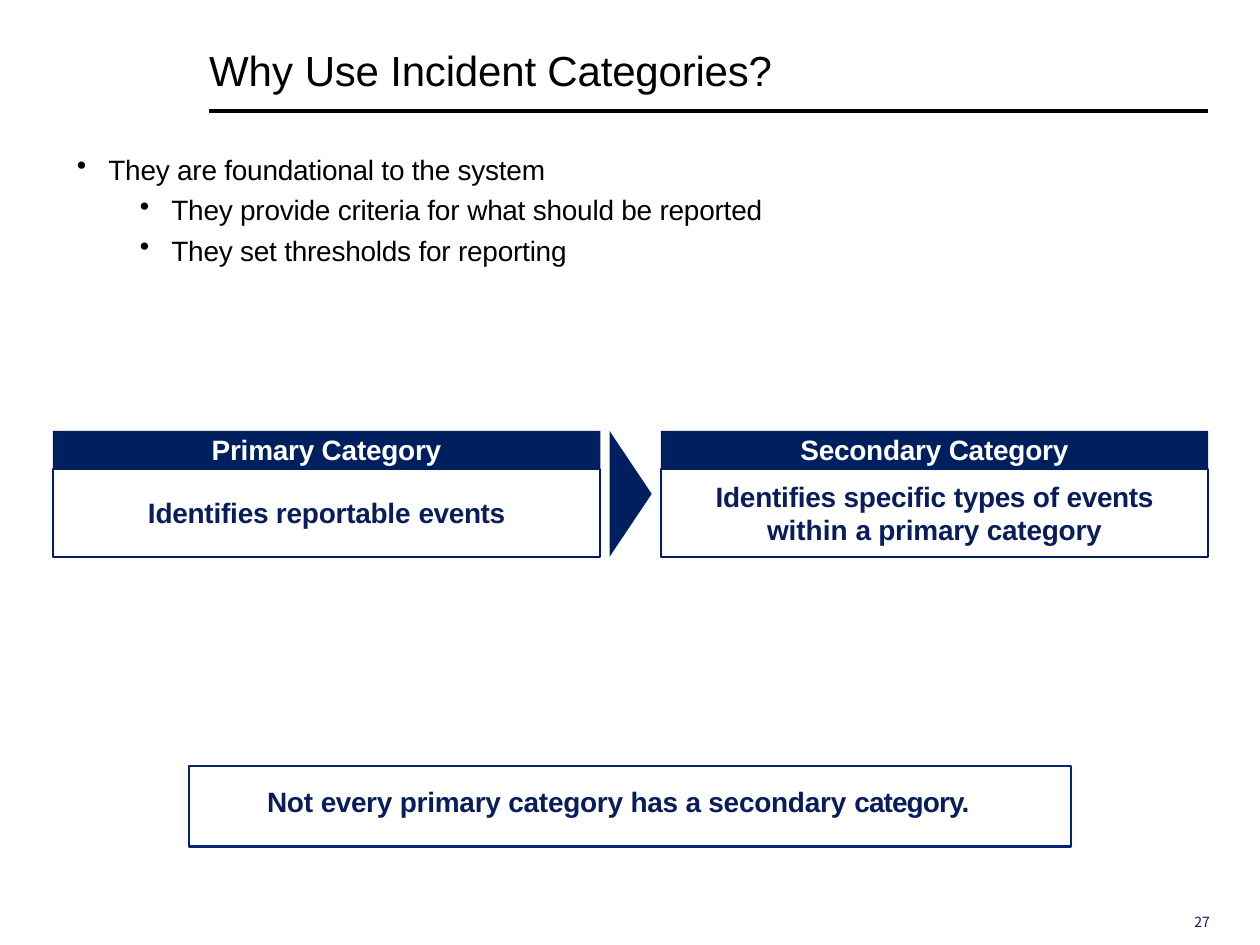
import lxml.etree
import pptx
import pptx.dml.color
import pptx.enum.shapes
import pptx.enum.text
import pptx.oxml.ns
import pptx.util

WIDTH = pptx.util.Inches(10)
HEIGHT = pptx.util.Inches(7.5)
COLUMN = WIDTH / 100
ROW = HEIGHT / 75
NAVY = "001F5F"
INK = "091D5D"
ALIGN = pptx.enum.text.PP_ALIGN
ANCHOR = pptx.enum.text.MSO_ANCHOR


def color(value):
    return pptx.dml.color.RGBColor.from_string(value)


def place(box):
    left, top, width, height = box
    return [round(length) for length in (left * COLUMN, top * ROW, width * COLUMN, height * ROW)]


def add_bullet(paragraph, level):
    properties = paragraph._p.get_or_add_pPr()
    properties.set("marL", str(pptx.util.Inches(0.27 + 0.5 * level)))
    properties.set("indent", str(pptx.util.Inches(-0.25)))
    bullet = lxml.etree.SubElement(properties, pptx.oxml.ns.qn("a:buChar"))
    bullet.set("char", "•")
    paragraph.level = level


def write(shape, paragraphs, size=16, font="Arial", ink="000000", bold=False, align=ALIGN.LEFT,
          anchor=ANCHOR.TOP, insets=(0, 0), levels=None, line_spacing=None):
    frame = shape.text_frame
    frame.word_wrap = True
    frame.vertical_anchor = anchor
    frame.margin_left, frame.margin_top = [pptx.util.Inches(inset) for inset in insets]
    frame.margin_right = frame.margin_bottom = 0
    for index, runs in enumerate(paragraphs):
        paragraph = frame.add_paragraph() if index else frame.paragraphs[0]
        if levels:
            add_bullet(paragraph, levels[index])
            if index:
                paragraph.space_before = pptx.util.Pt(4)
        paragraph.alignment = align
        if line_spacing:
            paragraph.line_spacing = pptx.util.Pt(line_spacing)
        for text, spacing in runs:
            run = paragraph.add_run()
            run.text = text
            run.font.name = font
            run.font.size = pptx.util.Pt(size)
            run.font.bold = bold
            run.font.color.rgb = color(ink)
            run._r.get_or_add_rPr().set("spc", str(round(spacing * 100)))


def add_text(slide, box, paragraphs, **text_format):
    shape = slide.shapes.add_textbox(*place(box))
    write(shape, paragraphs, **text_format)
    return shape


def paint(shape, fill=None, line=None, line_width=1):
    shape.shadow.inherit = False
    if fill:
        shape.fill.solid()
        shape.fill.fore_color.rgb = color(fill)
    else:
        shape.fill.background()
    if line:
        shape.line.color.rgb = color(line)
        shape.line.width = pptx.util.Pt(line_width)
    else:
        shape.line.fill.background()


def add_rectangle(slide, box, **style):
    shape = slide.shapes.add_shape(pptx.enum.shapes.MSO_SHAPE.RECTANGLE, *place(box))
    paint(shape, **style)
    return shape


def add_heading(slide, box):
    left, top, width, height = box
    x, y, length, drop = place(box)
    rule = slide.shapes.add_connector(
        pptx.enum.shapes.MSO_CONNECTOR.STRAIGHT, x, y + drop, x + length, y + drop)
    rule.line.color.rgb = color("000000")
    rule.line.width = pptx.util.Pt(2.04)
    lxml.etree.SubElement(rule._element.spPr, pptx.oxml.ns.qn("a:effectLst"))
    add_text(slide, (left, top, width, 4.2),
             [[("Why ", 0), ("Use Incident Categories?", -0.1)]], size=24)


def add_reasons(slide, box):
    reasons = [
        [("They are foundational to the system", -0.1)],
        [("They provide criteria for ", -0.1), ("what ", -0.2), ("should be reported", -0.1)],
        [("They set thresholds for reporting", -0.1)],
    ]
    add_text(slide, box, reasons, levels=[0, 1, 1])


def add_card(slide, box, heading, body):
    left, top, width, height = box
    head_height = height * 0.3
    centred = {"bold": True, "align": ALIGN.CENTER, "anchor": ANCHOR.MIDDLE}
    head = add_rectangle(slide, (left, top, width, head_height), fill=NAVY)
    write(head, [[(heading, -0.1)]], ink="FFFFFF", **centred)
    panel = add_rectangle(slide, (left, top + head_height, width, height - head_height),
                          line=NAVY, line_width=0.96)
    write(panel, body, ink=INK, **centred)


def add_arrow(slide, box):
    left, top, width, height = place(box)
    builder = slide.shapes.build_freeform(left, top)
    builder.add_line_segments([(left, top + height), (left + width, top + height // 2)], close=True)
    paint(builder.convert_to_shape(), fill=NAVY)


def add_categories(slide, box):
    left, top, width, height = box
    card_width, arrow_width = 43.45, 3.35
    gap = (width - 2 * card_width - arrow_width) / 2
    add_card(slide, (left, top, card_width, height), "Primary Category",
             [[("Identifies reportable ", -0.1), ("events", -0.2)]])
    add_card(slide, (left + width - card_width, top, card_width, height), "Secondary Category",
             [[("Identifies specific ", -0.1), ("types ", -0.2), ("of ", -0.1), ("events", -0.2)],
              [("within ", 0), ("a primary category", -0.1)]])
    add_arrow(slide, (left + card_width + gap, top, arrow_width, height))


def add_remark(slide, box):
    remark = add_rectangle(slide, box, line="002776", line_width=1.56)
    write(remark, [[("Not ", -0.1), ("every ", -0.2), ("primary category has a secondary ", -0.1),
                    ("category.", -0.5)]], ink=INK, bold=True, insets=(0.62, 0.15))


def add_page_number(slide, box):
    add_text(slide, box, [[("27", 0)]], size=8, font="Noto Sans CJK JP", ink=INK,
             insets=(0.03, 0), line_spacing=9.5)


def main():
    presentation = pptx.Presentation()
    presentation.slide_width = WIDTH
    presentation.slide_height = HEIGHT
    slide = presentation.slides.add_slide(presentation.slide_layouts[6])
    add_heading(slide, (16.6, 3.5, 79.3, 5.3))
    add_reasons(slide, (5.9, 12.1, 62.6, 9.2))
    add_categories(slide, (4.2, 34.2, 91.7, 10))
    add_remark(slide, (15, 60.8, 70, 6.4))
    add_page_number(slide, (94.5, 72.5, 1.7, 1.4))
    presentation.save("out.pptx")


if __name__ == "__main__":
    main()
